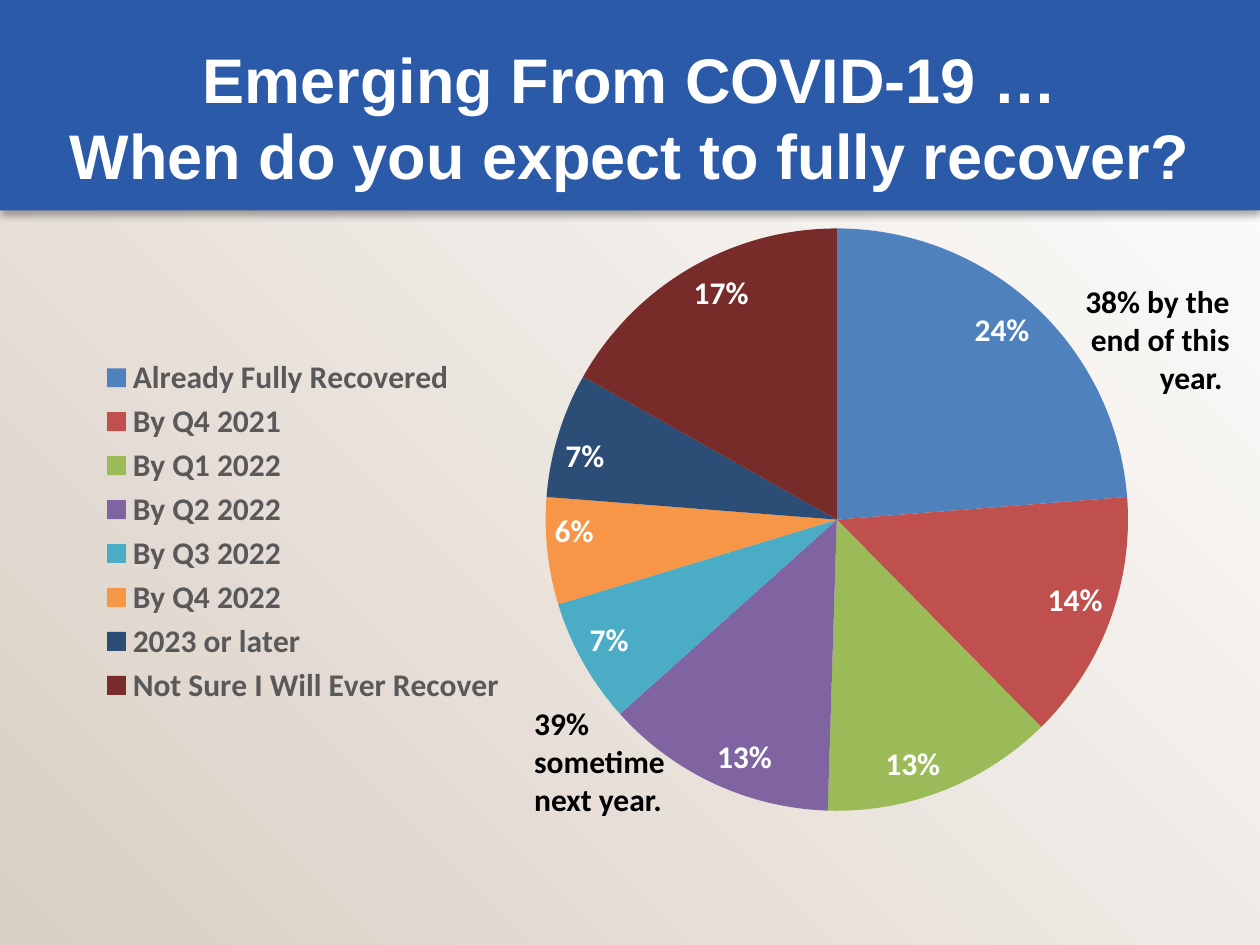
import pptx
import pptx.chart.data
import pptx.dml.color
import pptx.enum.chart
import pptx.enum.shapes
import pptx.enum.text
import pptx.oxml
import pptx.oxml.ns
import pptx.util
from pptx.util import Inches

COLORS = {"sand": "DACFC4", "white": "FFFFFF", "banner": "2B5AA9",
          "black": "000000", "legend": "595959"}
ANSWERS = [
    ("Already Fully Recovered", 0.24, "4F81BD"),
    ("By Q4 2021", 0.14, "C0504D"),
    ("By Q1 2022", 0.13, "9BBB59"),
    ("By Q2 2022", 0.13, "8064A2"),
    ("By Q3 2022", 0.07, "4BACC6"),
    ("By Q4 2022", 0.06, "F79646"),
    ("2023 or later", 0.07, "2C4D75"),
    ("Not Sure I Will Ever Recover", 0.17, "772C2A"),
]
ALIGN = pptx.enum.text.PP_ALIGN


def rgb(value):
    return pptx.dml.color.RGBColor.from_string(value)


def style_font(font, name, size, color):
    font.name = name
    font.size = pptx.util.Pt(size)
    font.bold = True
    font.color.rgb = rgb(color)


def set_margins(frame):
    frame.word_wrap = True
    frame.margin_left = frame.margin_right = Inches(0.05)
    frame.margin_top = frame.margin_bottom = Inches(0.05)


def add_panel(page, left, top, width, height):
    """Add a plain rectangle behind the title."""
    panel = page.shapes.add_shape(pptx.enum.shapes.MSO_SHAPE.RECTANGLE,
                                  left, top, width, height)
    panel.shadow.inherit = False
    panel.line.fill.background()
    page.shapes.title.element.addprevious(panel.element)
    return panel


def add_backdrop(page, left, top, width, height):
    fill = add_panel(page, left, top, width, height).fill
    fill.gradient()
    fill.gradient_angle = 45
    for stop, color in zip(fill.gradient_stops, ("sand", "white")):
        stop.color.rgb = rgb(COLORS[color])


def add_banner(page, left, top, width, height):
    """Draw the shadowed banner and set the title on it."""
    banner = add_panel(page, left, top, width, height)
    banner.fill.solid()
    banner.fill.fore_color.rgb = rgb(COLORS["banner"])
    effects = banner.element.spPr.find(pptx.oxml.ns.qn("a:effectLst"))
    effects.append(pptx.oxml.parse_xml(
        f'<a:outerShdw {pptx.oxml.ns.nsdecls("a")} blurRad="{pptx.util.Pt(4)}" '
        f'dist="{pptx.util.Pt(2.2)}" dir="5400000" rotWithShape="0">'
        f'<a:srgbClr val="{COLORS["black"]}"><a:alpha val="32000"/></a:srgbClr>'
        '</a:outerShdw>'))

    title = page.shapes.title
    title.left, title.top = left + Inches(0.5), top + Inches(0.3)
    title.width, title.height = width - Inches(1), Inches(1.25)
    frame = title.text_frame
    frame.text = "Emerging From COVID-19 …\vWhen do you expect to fully recover?"
    set_margins(frame)
    frame.auto_size = pptx.enum.text.MSO_AUTO_SIZE.NONE
    frame.vertical_anchor = pptx.enum.text.MSO_ANCHOR.MIDDLE
    para = frame.paragraphs[0]
    para.alignment = ALIGN.CENTER
    style_font(para.font, "Arial", 36, COLORS["white"])


def set_layout(part, index, target="", **fractions):
    """Fix a chart part's place as fractions of the chart area."""
    for layout in part.findall(pptx.oxml.ns.qn("c:layout")):
        part.remove(layout)
    modes = '<c:xMode val="edge"/><c:yMode val="edge"/>'
    sizes = "".join(f'<c:{key} val="{value}"/>' for key, value in fractions.items())
    part.insert(index, pptx.oxml.parse_xml(
        f'<c:layout {pptx.oxml.ns.nsdecls("c")}><c:manualLayout>'
        f'{target}{modes}{sizes}</c:manualLayout></c:layout>'))


def add_recovery_pie(page, left, top, width, height):
    names, values, fills = zip(*ANSWERS)
    data = pptx.chart.data.CategoryChartData(number_format="0%")
    data.categories = names
    data.add_series("Series 1", values)
    chart = page.shapes.add_chart(pptx.enum.chart.XL_CHART_TYPE.PIE,
                                  left, top, width, height, data).chart
    chart.has_title = False
    chart.font.name = "Calibri"
    chart.font.size = pptx.util.Pt(10)
    chart.font.color.rgb = rgb(COLORS["black"])

    plot = chart.plots[0]
    plot.vary_by_categories = True
    for index, color in enumerate(fills):
        fill = plot.series[0].points[index].format.fill
        fill.solid()
        fill.fore_color.rgb = rgb(color)

    labels = plot.series[0].data_labels
    labels.show_value = True
    labels.show_percentage = False
    labels.number_format = "0%"
    labels.number_format_is_linked = False
    labels.position = pptx.enum.chart.XL_LABEL_POSITION.INSIDE_END
    style_font(labels.font, "Calibri", 18, COLORS["white"])

    chart.has_legend = True
    legend = chart.legend
    legend.position = pptx.enum.chart.XL_LEGEND_POSITION.BOTTOM
    legend.include_in_layout = False
    style_font(legend.font, "Calibri", 18, COLORS["legend"])

    space = chart.element.chart
    set_layout(space.plotArea, 0, '<c:layoutTarget val="inner"/>',
               x=0.43, y=0.01, w=0.48, h=0.98)
    set_layout(space.find(pptx.oxml.ns.qn("c:legend")), 1,
               x=0.05, y=0.22, w=0.36, h=0.6)


def add_callout(page, left, top, text, alignment):
    box = page.shapes.add_textbox(left, top, Inches(1.33), Inches(1.01))
    frame = box.text_frame
    set_margins(frame)
    frame.auto_size = pptx.enum.text.MSO_AUTO_SIZE.SHAPE_TO_FIT_TEXT
    para = frame.paragraphs[0]
    para.text = text
    para.alignment = alignment
    style_font(para.font, "Calibri", 18, COLORS["black"])


def main():
    deck = pptx.Presentation()
    deck.slide_width, deck.slide_height = Inches(10), Inches(7.5)
    page = deck.slides.add_slide(deck.slide_layouts.get_by_name("Title Only"))
    add_backdrop(page, 0, 0, deck.slide_width, deck.slide_height)
    add_banner(page, 0, 0, deck.slide_width, Inches(1.67))
    add_recovery_pie(page, Inches(0.19), Inches(1.76), Inches(9.63), Inches(4.73))
    add_callout(page, Inches(8.48), Inches(2.19),
                "38% by the end of this year. ", ALIGN.RIGHT)
    add_callout(page, Inches(4.19), Inches(5.54),
                "39% sometime next year.", ALIGN.LEFT)
    deck.save("out.pptx")


if __name__ == "__main__":
    main()
